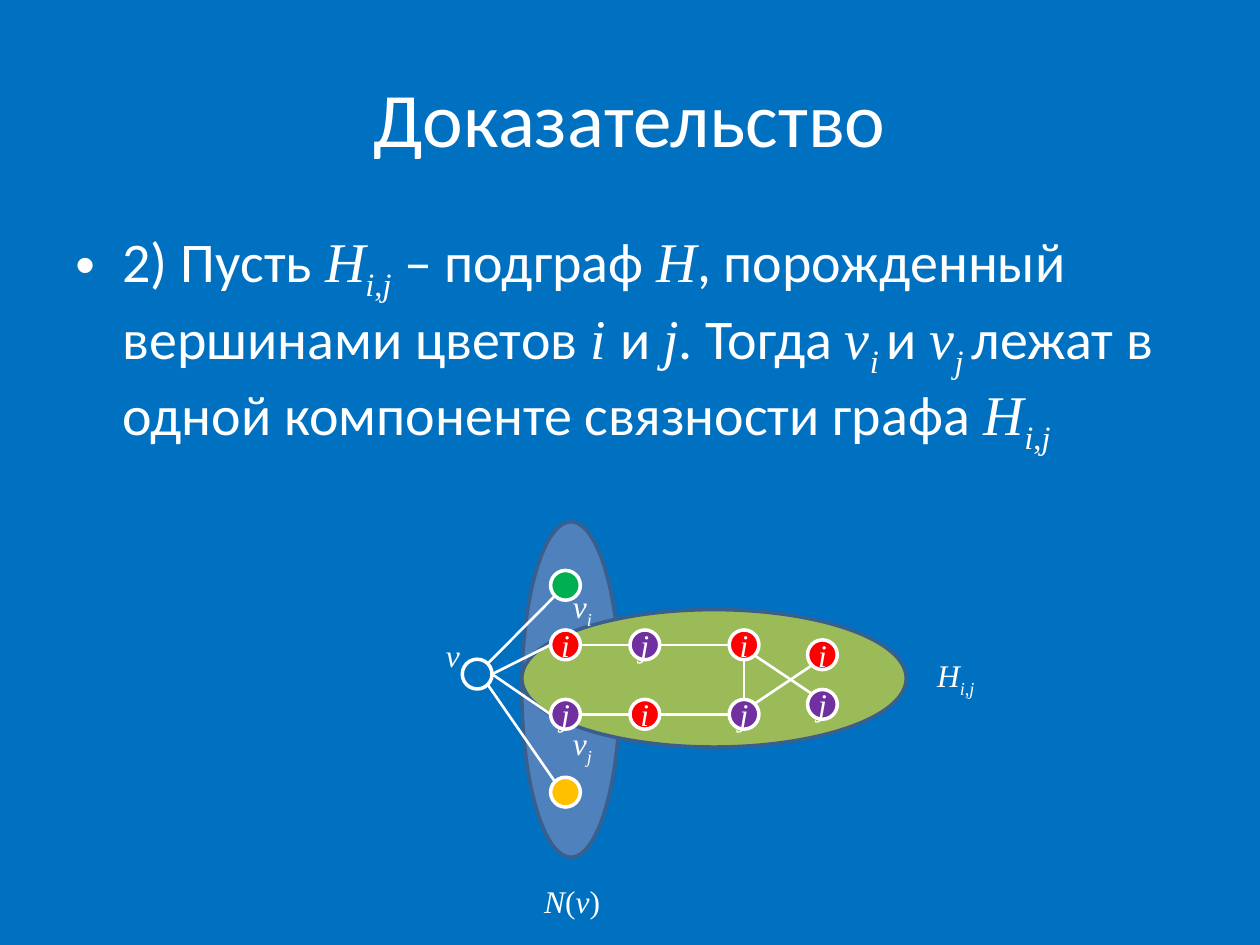
"""Build a slide with a proof step and a diagram of a coloured graph."""
from lxml import etree
from pptx import Presentation
from pptx.dml.color import RGBColor
from pptx.enum.shapes import MSO_CONNECTOR, MSO_SHAPE
from pptx.enum.text import MSO_ANCHOR, MSO_AUTO_SIZE, PP_ALIGN
from pptx.oxml.ns import qn
from pptx.util import Cm, Pt

OVAL = MSO_SHAPE.OVAL
STRAIGHT = MSO_CONNECTOR.STRAIGHT
MIDDLE, TOP = MSO_ANCHOR.MIDDLE, MSO_ANCHOR.TOP
CENTER, LEFT = PP_ALIGN.CENTER, PP_ALIGN.LEFT
GROW = MSO_AUTO_SIZE.SHAPE_TO_FIT_TEXT

WHITE, BACKGROUND = "FFFFFF", "0070C0"
RED, PURPLE, GREEN, YELLOW = "FF0000", "7030A0", "00B050", "FFC000"

STYLES = {
    "text": {"name": "Calibri", "italic": False},
    "math": {"name": "Times New Roman", "italic": True},
    "sub": {"name": "Times New Roman", "italic": True},
    "upright": {"name": "Times New Roman", "italic": False},
    "upright sub": {"name": "Times New Roman", "italic": False},
}

SUBGRAPH = [("H", "math"), ("i", "sub"), (",", "upright sub"), ("j", "sub")]
TITLE = [("Доказательство", "text")]
STATEMENT = [
    ("2) Пусть ", "text"), *SUBGRAPH, (" – подграф ", "text"), ("H", "math"),
    (", порожденный вершинами цветов ", "text"), ("i ", "math"), ("и ", "text"),
    ("j", "math"), (". Тогда ", "text"), ("v", "math"), ("i ", "sub"),
    ("и ", "text"), ("v", "math"), ("j ", "sub"),
    ("лежат в одной компоненте связности графа ", "text"), *SUBGRAPH,
]

REGIONS = [
    ((10.52, 10.52, 1.98, 6.76), "4F81BD"),
    ((10.52, 12.29, 7.75, 2.77), "9BBB59"),
]
NODE_SIZE = 0.6
NODES = {
    "v": (9.62, 13.59, BACKGROUND, ""),
    "green": (11.4, 11.8, GREEN, ""),
    "yellow": (11.4, 15.97, YELLOW, ""),
    "top 1": (11.4, 13, RED, "i"),
    "top 2": (13, 13, PURPLE, "j"),
    "top 3": (15, 13, RED, "i"),
    "top 4": (16.58, 13.2, RED, "i"),
    "bottom 1": (11.4, 14.4, PURPLE, "j"),
    "bottom 2": (13, 14.4, RED, "i"),
    "bottom 3": (15, 14.4, PURPLE, "j"),
    "bottom 4": (16.58, 14.2, PURPLE, "j"),
}
EDGES = [
    ("v", "green"), ("v", "top 1"), ("v", "bottom 1"), ("v", "yellow"),
    ("top 1", "top 2"), ("top 2", "top 3"), ("top 3", "bottom 3"),
    ("bottom 1", "bottom 2"), ("bottom 2", "bottom 3"),
    ("top 3", "bottom 4"), ("bottom 3", "top 4"),
]
LABELS = [
    ((8.74, 12.7, 0.79, 1.02), [("v", "math")]),
    ((11.3, 11.71, 0.91, 1.02), [("v", "math"), ("i", "sub")]),
    ((11.3, 14.48, 0.91, 1.02), [("v", "math"), ("j", "sub")]),
    ((18.64, 13.11, 1.32, 1.02), SUBGRAPH),
    ((10.72, 17.65, 1.65, 1.02),
     [("N", "math"), ("(", "upright"), ("v", "math"), (")", "upright")]),
]


def color(value):
    return RGBColor.from_string(value)


def apply(target, values):
    for name, value in values.items():
        setattr(target, name, value)


def write(shape, spans, size, align=LEFT, **frame_format):
    frame = shape.text_frame
    apply(frame, frame_format)
    para = frame.paragraphs[0]
    para.alignment = align
    for text, style in spans:
        span = para.add_run()
        span.text = text
        apply(span.font, {"size": Pt(size), **STYLES[style]})
        span.font.color.rgb = color(WHITE)
        if style.endswith("sub"):
            span.font._element.set("baseline", "-25000")
    return para


def add_text(page, place, spans, size, **text_format):
    box = page.shapes.add_textbox(*map(Cm, place))
    return write(box, spans, size, **text_format)


def add_oval(page, place, fill, outline):
    oval = page.shapes.add_shape(OVAL, *map(Cm, place))
    oval.shadow.inherit = False
    oval.fill.solid()
    oval.fill.fore_color.rgb = color(fill)
    oval.line.color.rgb = color(outline)
    oval.line.width = Pt(2)
    return oval


def add_node(page, x, y, fill, label):
    corner = (x - NODE_SIZE / 2, y - NODE_SIZE / 2)
    node = add_oval(page, (*corner, NODE_SIZE, NODE_SIZE), fill, WHITE)
    if label:
        write(node, [(label, "math")], 18, align=CENTER, word_wrap=False,
              vertical_anchor=MIDDLE, margin_left=0, margin_right=0,
              margin_top=0, margin_bottom=0)


def rim_point(start, end):
    """Return the point on the rim, at a multiple of 45 degrees, facing end."""
    gaps = [b - a for a, b in zip(start, end)]
    reach = max(map(abs, gaps))
    steps = [round(gap / abs(gap)) if abs(gap) > reach / 2 else 0 for gap in gaps]
    scale = NODE_SIZE / 2 / sum(map(abs, steps)) ** 0.5
    return [Cm(a + step * scale) for a, step in zip(start, steps)]


def add_edge(page, first, second):
    start, end = NODES[first][:2], NODES[second][:2]
    edge = page.shapes.add_connector(
        STRAIGHT, *rim_point(start, end), *rim_point(end, start))
    edge.line.color.rgb = color(WHITE)
    edge.line.width = Pt(1.5)
    etree.SubElement(edge._element.spPr, qn("a:effectLst"))


def add_bullet(para):
    properties = para._p.get_or_add_pPr()
    properties.set("marL", str(Cm(0.95)))
    properties.set("indent", str(Cm(-0.95)))
    etree.SubElement(properties, qn("a:buFont")).set("typeface", "Arial")
    etree.SubElement(properties, qn("a:buChar")).set("char", "•")


def main():
    deck = Presentation()
    deck.slide_width, deck.slide_height = Cm(25.4), Cm(19.05)
    page = deck.slides.add_slide(deck.slide_layouts[6])
    page.background.fill.solid()
    page.background.fill.fore_color.rgb = color(BACKGROUND)

    for place, fill in REGIONS:
        add_oval(page, place, fill, "3A5F8C")
    add_text(page, (1.27, 0.76, 22.86, 3.18), TITLE, 44, align=CENTER,
             word_wrap=True, vertical_anchor=MIDDLE)
    add_bullet(add_text(page, (1.27, 4.45, 22.86, 6.48), STATEMENT, 32,
                        word_wrap=True, vertical_anchor=TOP))
    for node in NODES.values():
        add_node(page, *node)
    for edge in EDGES:
        add_edge(page, *edge)
    for place, spans in LABELS:
        add_text(page, place, spans, 18, word_wrap=False, auto_size=GROW)

    deck.save("out.pptx")


if __name__ == "__main__":
    main()
